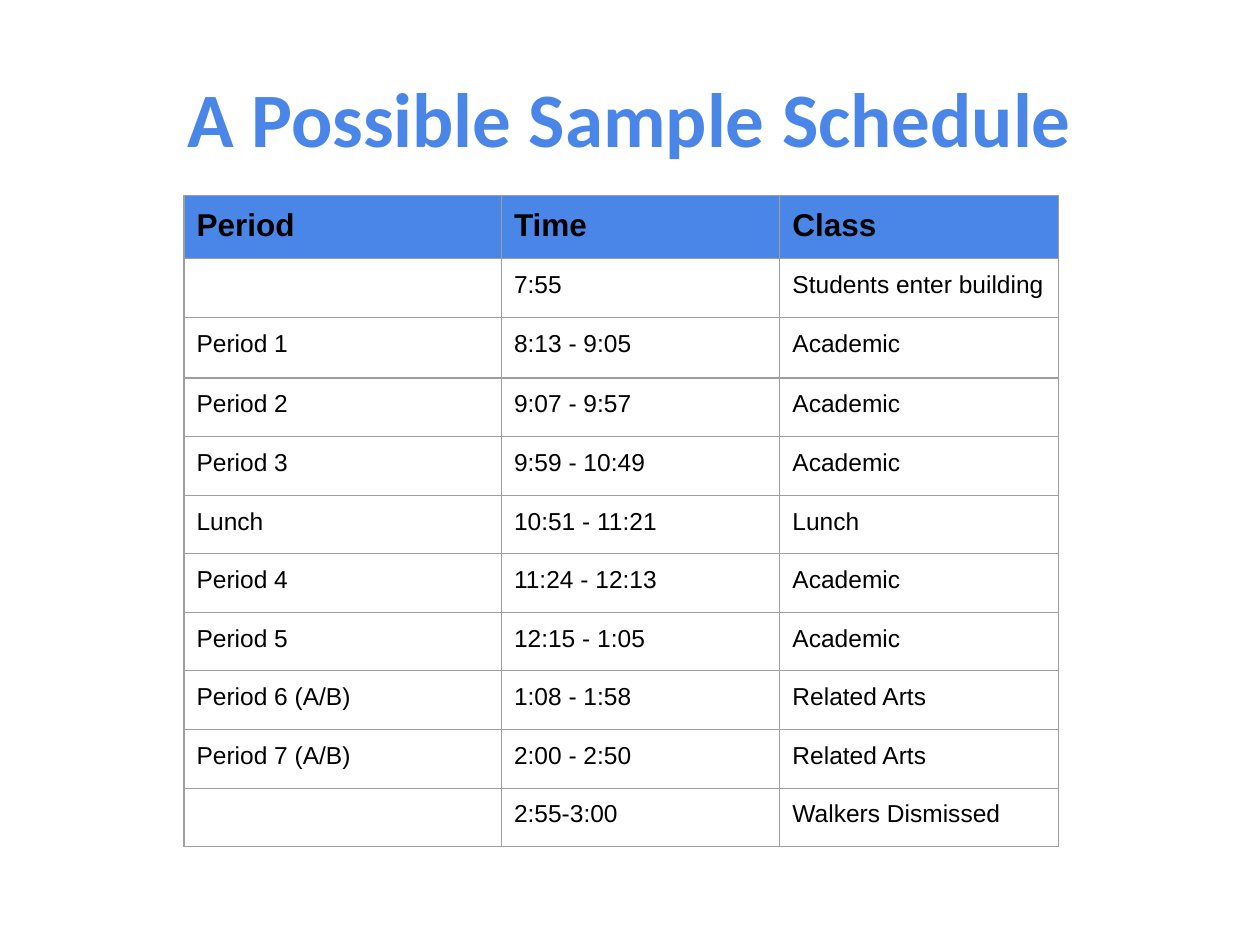
"""Build a one-slide school day schedule with a title and a table."""
from lxml import etree
from pptx import Presentation
from pptx.dml.color import RGBColor
from pptx.enum.text import MSO_ANCHOR, PP_ALIGN
from pptx.oxml.ns import qn
from pptx.util import Inches, Pt

MIDDLE, TOP = MSO_ANCHOR.MIDDLE, MSO_ANCHOR.TOP
CENTER, LEFT = PP_ALIGN.CENTER, PP_ALIGN.LEFT

TITLE = "A Possible Sample Schedule"
SCHEDULE = [
    ("Period", "Time", "Class"),
    ("", "7:55", "Students enter building"),
    ("Period 1", "8:13 - 9:05", "Academic"),
    ("Period 2", "9:07 - 9:57", "Academic"),
    ("Period 3", "9:59 - 10:49", "Academic"),
    ("Lunch", "10:51 - 11:21", "Lunch"),
    ("Period 4", "11:24 - 12:13", "Academic"),
    ("Period 5", "12:15 - 1:05", "Academic"),
    ("Period 6 (A/B)", "1:08 - 1:58", "Related Arts"),
    ("Period 7 (A/B)", "2:00 - 2:50", "Related Arts"),
    ("", "2:55-3:00", "Walkers Dismissed"),
]

COLORS = {"blue": "4A86E8", "black": "000000", "border": "9E9E9E"}
FORMATS = {
    "title": {"name": "Calibri", "size": Pt(44), "bold": True},
    "header": {"name": "Arial", "size": Pt(18), "bold": True},
    "body": {"name": "Arial", "size": Pt(14), "bold": False},
}
SLIDE_WIDTH, SLIDE_HEIGHT = 10, 7.5
TITLE_AREA = (0.05 * SLIDE_WIDTH, 0.04 * SLIDE_HEIGHT, 0.9 * SLIDE_WIDTH, 1.25)
TABLE_LEFT, TABLE_TOP, TABLE_HEIGHT = 1.46, 1.55, 5.17
COLUMN_WIDTHS = [2.52, 2.21, 2.21]
FIRST_HEIGHTS = [0.5, 0.47, 0.48]
INSET = 0.1
SIDES = ("left", "right", "top", "bottom")


def write(paragraph, text, style, color, alignment):
    paragraph.alignment = alignment
    span = paragraph.add_run()
    span.text = text
    for name, value in FORMATS[style].items():
        setattr(span.font, name, value)
    span.font.color.rgb = RGBColor.from_string(COLORS[color])


def set_insets(holder, inset):
    for side in SIDES:
        setattr(holder, f"margin_{side}", Inches(inset))


def add_borders(cell):
    properties = cell._tc.get_or_add_tcPr()
    for side in SIDES:
        line = etree.SubElement(properties, qn(f"a:ln{side[0].upper()}"), w=str(Pt(0.75)))
        fill = etree.SubElement(line, qn("a:solidFill"))
        etree.SubElement(fill, qn("a:srgbClr"), val=COLORS["border"])


def add_title(page):
    frame = page.shapes.add_textbox(*map(Inches, TITLE_AREA)).text_frame
    frame.word_wrap = True
    frame.vertical_anchor = MIDDLE
    set_insets(frame, INSET)
    write(frame.paragraphs[0], TITLE, "title", "blue", CENTER)


def add_schedule(page):
    area = (TABLE_LEFT, TABLE_TOP, sum(COLUMN_WIDTHS), TABLE_HEIGHT)
    table = page.shapes.add_table(
        len(SCHEDULE), len(COLUMN_WIDTHS), *map(Inches, area)
    ).table
    table.first_row = table.horz_banding = False
    for column, width in zip(table.columns, COLUMN_WIDTHS):
        column.width = Inches(width)
    equal_rows = len(SCHEDULE) - len(FIRST_HEIGHTS)
    equal_height = (TABLE_HEIGHT - sum(FIRST_HEIGHTS)) / equal_rows
    heights = FIRST_HEIGHTS + [equal_height] * equal_rows
    for index, (row, height, texts) in enumerate(zip(table.rows, heights, SCHEDULE)):
        row.height = Inches(height)
        for cell, text in zip(row.cells, texts):
            add_borders(cell)
            cell.vertical_anchor = TOP
            set_insets(cell, INSET if text else 0)
            if index == 0:
                cell.fill.solid()
                cell.fill.fore_color.rgb = RGBColor.from_string(COLORS["blue"])
            else:
                cell.fill.background()
            if text:
                style = "body" if index else "header"
                write(cell.text_frame.paragraphs[0], text, style, "black", LEFT)


def main():
    deck = Presentation()
    deck.slide_width, deck.slide_height = Inches(SLIDE_WIDTH), Inches(SLIDE_HEIGHT)
    page = deck.slides.add_slide(deck.slide_layouts[6])
    add_title(page)
    add_schedule(page)
    deck.save("out.pptx")


if __name__ == "__main__":
    main()
